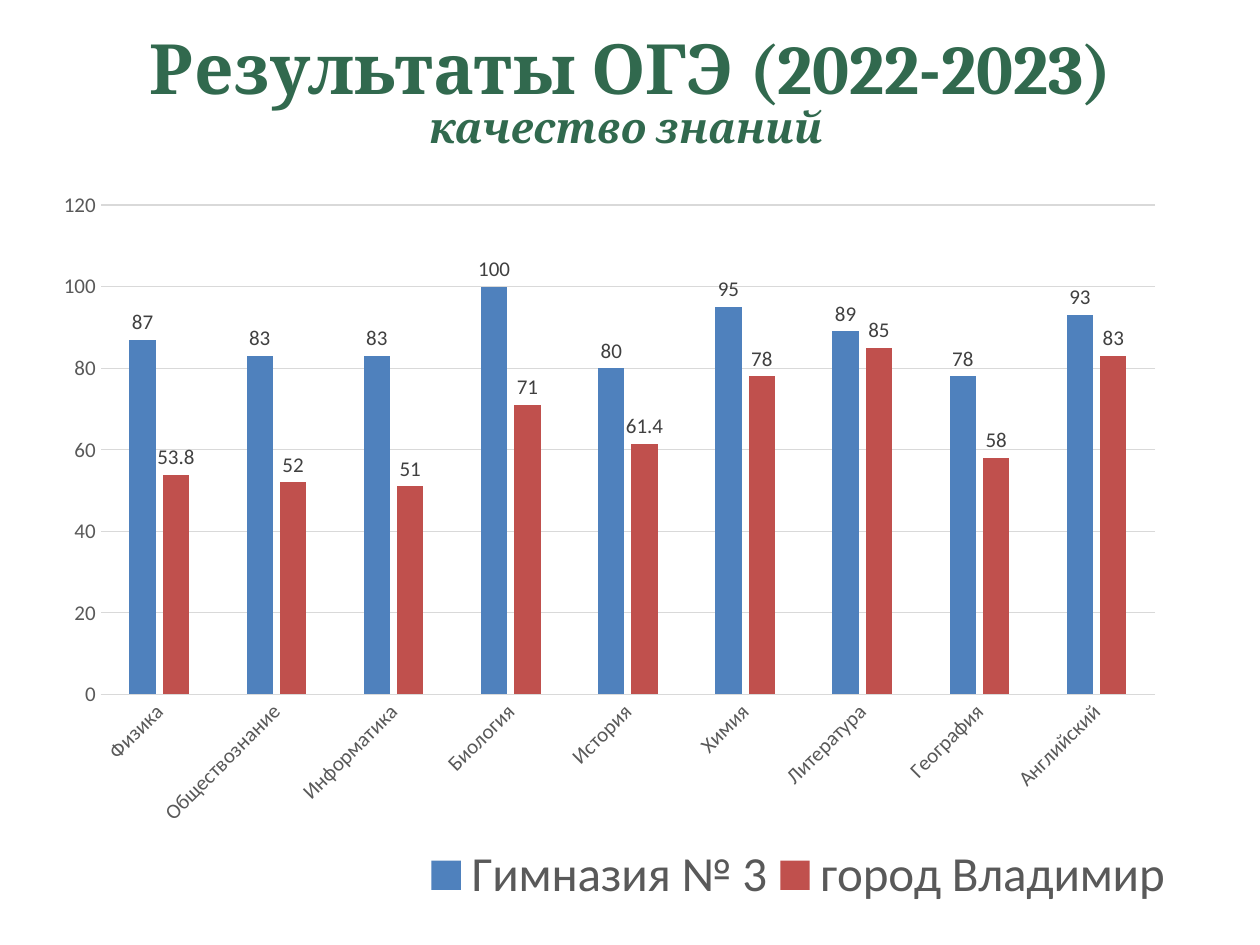
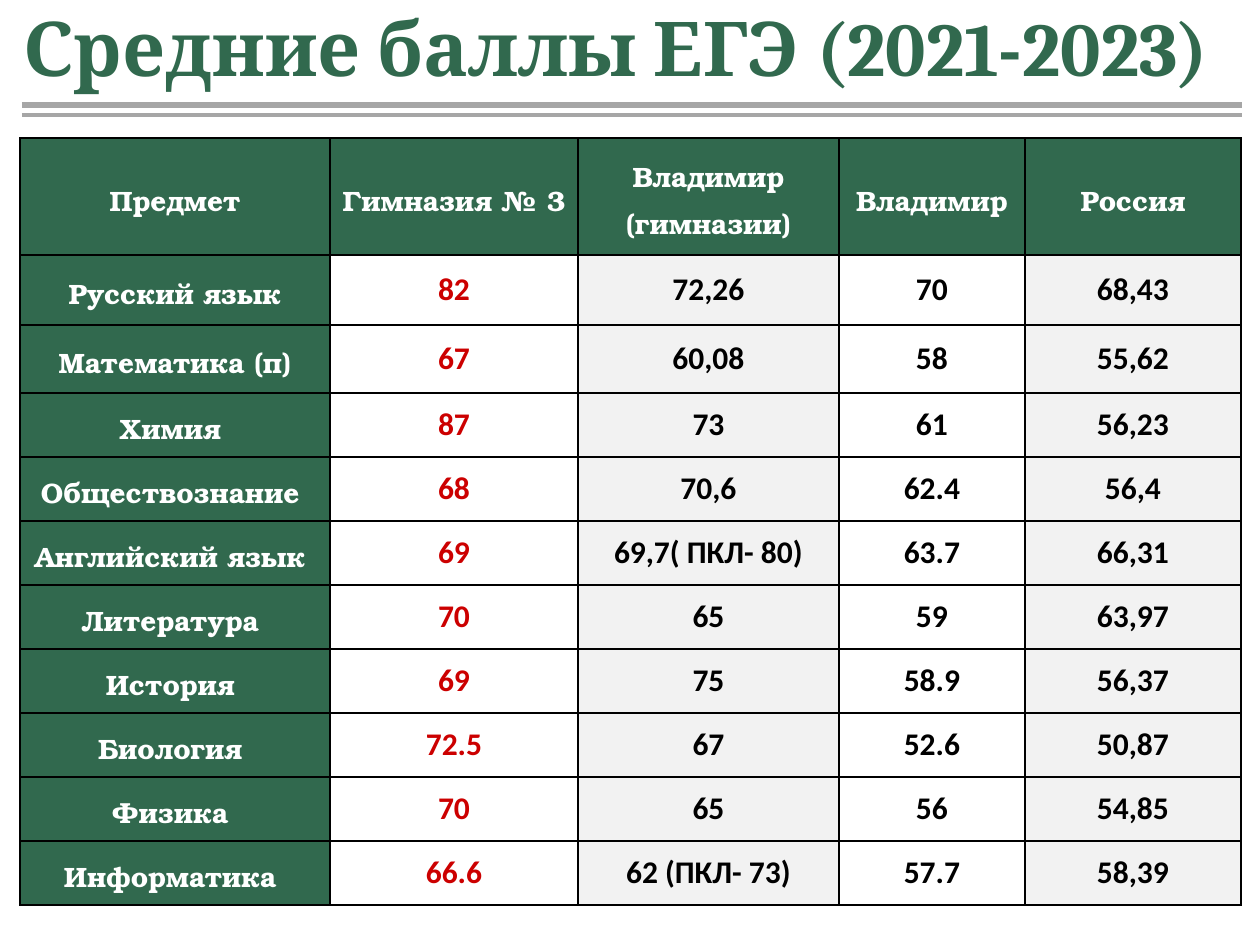
"""Build two slides of exam results: a column chart and a table of mean scores."""
import lxml.etree
import pptx
import pptx.chart.data
import pptx.dml.color
import pptx.enum.chart
import pptx.enum.shapes
import pptx.enum.text
import pptx.oxml
import pptx.oxml.ns
import pptx.util

RGBColor = pptx.dml.color.RGBColor
GREEN = RGBColor(0x31, 0x69, 0x4E)
WHITE = RGBColor(0xFF, 0xFF, 0xFF)
BLACK = RGBColor(0x00, 0x00, 0x00)
RED = RGBColor(0xCC, 0x00, 0x00)
PALE = RGBColor(0xF2, 0xF2, 0xF2)
RULE_GREY = RGBColor(0xA6, 0xA6, 0xA6)
GRID_GREY = RGBColor(0xD9, 0xD9, 0xD9)
AXIS_GREY = RGBColor(0x59, 0x59, 0x59)
LABEL_GREY = RGBColor(0x40, 0x40, 0x40)
BLUE = RGBColor(0x4F, 0x81, 0xBD)
BRICK = RGBColor(0xC0, 0x50, 0x4D)

PX = 914400 // 126
CENTER = pptx.enum.text.PP_ALIGN.CENTER
MIDDLE = pptx.enum.text.MSO_ANCHOR.MIDDLE


def style_font(font, size, color, name="Calibri", bold=False):
    font.size = pptx.util.Pt(size)
    font.color.rgb = color
    font.name = name
    font.bold = bold


def add_title(slide, box, text, sizes):
    frame = slide.shapes.add_textbox(*[n * PX for n in box]).text_frame
    frame.word_wrap = True
    frame.vertical_anchor = MIDDLE
    frame.text = text
    for run, size in zip(frame.paragraphs[0].runs, sizes):
        style_font(run.font, size, GREEN, "Cambria", True)
    return frame.paragraphs[0]


presentation = pptx.Presentation()
presentation.slide_width = 1260 * PX
presentation.slide_height = 945 * PX
blank = presentation.slide_layouts[6]

oge_slide = presentation.slides.add_slide(blank)
oge_title = add_title(oge_slide, (64, 16, 1134, 158),
                      "Результаты ОГЭ (2022-2023)\vкачество знаний ", (39.6, 24.3))
oge_title.alignment = CENTER
oge_title.line_spacing = 0.85
oge_title.runs[1].font.italic = True

quality = pptx.chart.data.CategoryChartData()
quality.categories = ["Физика", "Обществознание", "Информатика", "Биология", "История",
                      "Химия", "Литература", "География", "Английский"]
quality.add_series("Гимназия № 3", (87, 83, 83, 100, 80, 95, 89, 78, 93))
quality.add_series("город Владимир", (53.8, 52, 51, 71, 61.4, 78, 85, 58, 83))
chart = oge_slide.shapes.add_chart(
    pptx.enum.chart.XL_CHART_TYPE.COLUMN_CLUSTERED,
    44 * PX, 175 * PX, 1134 * PX, 753 * PX, quality).chart
style_font(chart.font, 10, BLACK)
chart.has_title = False
chart.has_legend = True
chart.legend.position = pptx.enum.chart.XL_LEGEND_POSITION.BOTTOM
chart.legend.include_in_layout = False
style_font(chart.legend.font, 28, AXIS_GREY)

columns = chart.plots[0]
columns.gap_width = 219
columns.overlap = -27
columns.vary_by_categories = False
for series, color in zip(columns.series, (BLUE, BRICK)):
    series.format.fill.solid()
    series.format.fill.fore_color.rgb = color
    labels = series.data_labels
    labels.show_value = True
    labels.position = pptx.enum.chart.XL_LABEL_POSITION.OUTSIDE_END
    style_font(labels.font, 12, LABEL_GREY)

subjects, scale = chart.category_axis, chart.value_axis
for axis in (subjects, scale):
    axis.major_tick_mark = pptx.enum.chart.XL_TICK_MARK.NONE
    axis.minor_tick_mark = pptx.enum.chart.XL_TICK_MARK.NONE
    style_font(axis.tick_labels.font, 12, AXIS_GREY)
subjects.tick_labels.font._element.getparent().getparent().getparent().find(
    pptx.oxml.ns.qn("a:bodyPr")).set("rot", "-2700000")
scale.minimum_scale, scale.maximum_scale, scale.major_unit = 0, 120, 20
scale.format.line.fill.background()
for line in (subjects.format.line, scale.major_gridlines.format.line):
    line.color.rgb = GRID_GREY
    line.width = pptx.util.Pt(0.75)

plot_area = chart._chartSpace.chart.plotArea
legend = chart.legend._element
for old_layout in plot_area.findall(pptx.oxml.ns.qn("c:layout")):
    plot_area.remove(old_layout)
for old_layout in legend.findall(pptx.oxml.ns.qn("c:layout")):
    legend.remove(old_layout)
for parent, index, target, bounds in (
        (plot_area, 0, '<c:layoutTarget val="inner"/>', (0.05, 0.04, 0.93, 0.65)),
        (legend, 1, "", (0.33, 0.88, 0.67, 0.1))):
    sizes = "".join(f'<c:{key} val="{value}"/>' for key, value in zip("xywh", bounds))
    parent.insert(index, pptx.oxml.parse_xml(
        f'<c:layout {pptx.oxml.ns.nsdecls("c")}><c:manualLayout>{target}'
        f'<c:xMode val="edge"/><c:yMode val="edge"/>{sizes}</c:manualLayout></c:layout>'))

ege_slide = presentation.slides.add_slide(blank)
add_title(ege_slide, (11, -34, 1245, 161), "Средние баллы ЕГЭ (2021-2023)", (43.2,))
for y, weight in ((105, 3), (115, 1.75)):
    rule = ege_slide.shapes.add_connector(
        pptx.enum.shapes.MSO_CONNECTOR.STRAIGHT, 22 * PX, y * PX, 1242 * PX, y * PX)
    rule.line.color.rgb = RULE_GREY
    rule.line.width = pptx.util.Pt(weight)
    lxml.etree.SubElement(rule._element.spPr, pptx.oxml.ns.qn("a:effectLst"))

scores = [
    ("Предмет", "Гимназия № 3", "Владимир\n(гимназии)", "Владимир", "Россия"),
    ("Русский язык", "82", "72,26", "70", "68,43"),
    ("Математика (п)", "67", "60,08", "58", "55,62"),
    ("Химия ", "87", "73", "61", "56,23"),
    ("Обществознание ", "68", "70,6", "62.4", "56,4"),
    ("Английский язык ", "69", "69,7( ПКЛ- 80)", "63.7", "66,31"),
    ("Литература ", "70", "65", "59", "63,97"),
    ("История ", "69", "75", "58.9", "56,37"),
    ("Биология ", "72.5", "67", "52.6", "50,87"),
    ("Физика ", "70", "65", "56", "54,85"),
    ("Информатика ", "66.6", "62 (ПКЛ- 73)", "57.7", "58,39"),
]
widths = (310, 248, 261, 186, 216)
heights = (117, 70, 68) + (64,) * 8
table = ege_slide.shapes.add_table(
    len(scores), len(widths), 20 * PX, 138 * PX, sum(widths) * PX, sum(heights) * PX).table
for column, width in zip(table.columns, widths):
    column.width = width * PX
for row, height in zip(table.rows, heights):
    row.height = height * PX

column_fills = (GREEN, WHITE, PALE, WHITE, PALE)
for r, record in enumerate(scores):
    for c, text in enumerate(record):
        cell = table.cell(r, c)
        heading = r == 0 or c == 0
        cell.text = text
        cell.vertical_anchor = MIDDLE
        cell.margin_left = cell.margin_right = 6 * PX
        cell.fill.solid()
        cell.fill.fore_color.rgb = GREEN if heading else column_fills[c]
        for paragraph in cell.text_frame.paragraphs:
            paragraph.alignment = CENTER
            font = paragraph.runs[0].font
            if heading:
                paragraph.line_spacing = 1.15
                style_font(font, 16, WHITE, "TeX Gyre Bonum", True)
            else:
                style_font(font, 18, RED if c == 1 else BLACK, bold=True)
        for i, side in enumerate(("lnL", "lnR", "lnT", "lnB")):
            cell._tc.tcPr.insert(i, pptx.oxml.parse_xml(
                f'<a:{side} {pptx.oxml.ns.nsdecls("a")} w="12700"><a:solidFill>'
                f'<a:srgbClr val="{BLACK}"/></a:solidFill></a:{side}>'))

presentation.save("out.pptx")
